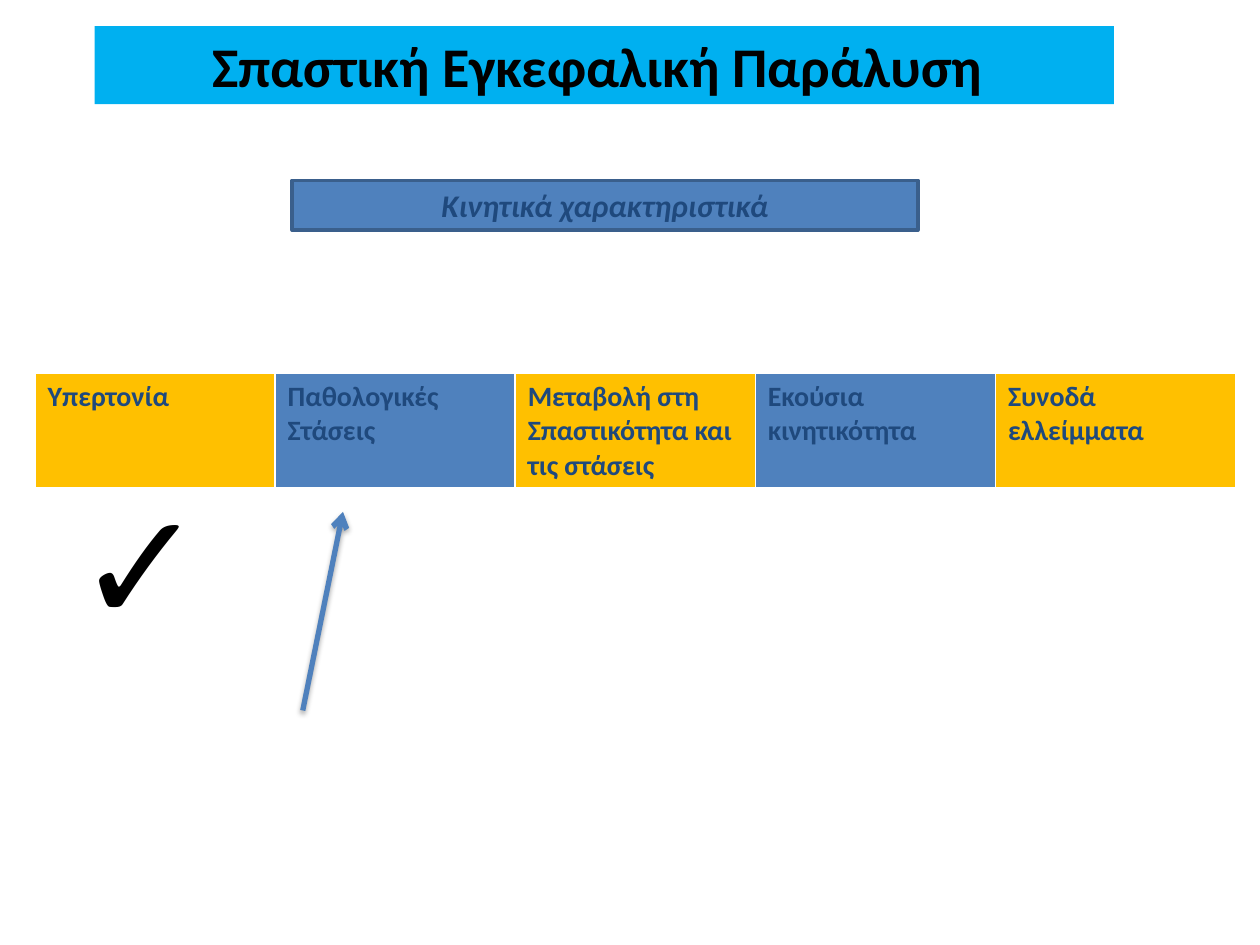
from lxml import etree
from pptx import Presentation
from pptx.dml.color import RGBColor
from pptx.enum import shapes, text
from pptx.oxml import parse_xml
from pptx.oxml.ns import nsdecls, qn
from pptx.util import Pt

FONT = "Calibri"
BLACK = RGBColor(0x00, 0x00, 0x00)
WHITE = RGBColor(0xFF, 0xFF, 0xFF)
NAVY = RGBColor(0x1F, 0x49, 0x7D)
BLUE = RGBColor(0x4F, 0x81, 0xBD)
DARK_BLUE = RGBColor(0x3A, 0x5F, 0x8C)
SKY = RGBColor(0x00, 0xB0, 0xF0)
AMBER = RGBColor(0xFF, 0xC0, 0x00)

FEATURES = ["Υπερτονία", "Παθολογικές Στάσεις",
            "Μεταβολή στη Σπαστικότητα και τις στάσεις",
            "Εκούσια κινητικότητα", "Συνοδά ελλείμματα"]
BORDERS = {"lnL": 1, "lnR": 1, "lnT": 1, "lnB": 3}


def points(box):
    return [Pt(length) for length in box]


def write(frame, content, size, color, bold=False, italic=False, align=None):
    frame.word_wrap = True
    paragraph = frame.paragraphs[0]
    paragraph.alignment = align
    run = paragraph.add_run()
    run.text = content
    font = run.font
    font.name, font.size, font.bold, font.italic = FONT, Pt(size), bold, italic
    font.color.rgb = color


def paint(shape, color):
    shape.fill.solid()
    shape.fill.fore_color.rgb = color


def place_title(slide, box):
    title = slide.shapes.title
    title.left, title.top, title.width, title.height = points(box)
    paint(title, SKY)
    title.text_frame.vertical_anchor = text.MSO_ANCHOR.MIDDLE
    title.text_frame.auto_size = text.MSO_AUTO_SIZE.NONE
    write(title.text_frame, "Σπαστική Εγκεφαλική Παράλυση ", 32, BLACK,
          bold=True, align=text.PP_ALIGN.CENTER)


def add_heading(slide, box):
    heading = slide.shapes.add_shape(shapes.MSO_SHAPE.RECTANGLE, *points(box))
    heading.shadow.inherit = False
    paint(heading, BLUE)
    heading.line.color.rgb = DARK_BLUE
    heading.line.width = Pt(2)
    heading.text_frame.vertical_anchor = text.MSO_ANCHOR.MIDDLE
    write(heading.text_frame, "Κινητικά χαρακτηριστικά", 18, NAVY,
          bold=True, italic=True, align=text.PP_ALIGN.CENTER)


def set_borders(cell):
    properties = cell._tc.get_or_add_tcPr()
    for position, (side, width) in enumerate(BORDERS.items()):
        properties.insert(position, parse_xml(
            f'<a:{side} {nsdecls("a")} w="{Pt(width)}"><a:solidFill>'
            f'<a:srgbClr val="{WHITE}"/></a:solidFill></a:{side}>'))


def add_features(slide, box):
    table = slide.shapes.add_table(1, len(FEATURES), *points(box)).table
    for index, feature in enumerate(FEATURES):
        table.columns[index].width = Pt(box[2] / len(FEATURES))
        cell = table.cell(0, index)
        paint(cell, BLUE if index % 2 else AMBER)
        set_borders(cell)
        write(cell.text_frame, feature, 16, NAVY, bold=True)


def add_check_mark(slide, box):
    check_mark = slide.shapes.add_textbox(*points(box))
    write(check_mark.text_frame, "✓", 88, BLACK)


def add_arrow(slide, start, end):
    arrow = slide.shapes.add_connector(
        shapes.MSO_CONNECTOR.STRAIGHT, *points(start + end))
    arrow.line.color.rgb = BLUE
    arrow.line.width = Pt(3)
    # Arrowhead and soft shadow
    etree.SubElement(arrow.line._get_or_add_ln(), qn("a:tailEnd"), type="arrow")
    arrow._element.spPr.append(parse_xml(
        f'<a:effectLst {nsdecls("a")}><a:outerShdw blurRad="{Pt(3.1)}" '
        f'dist="{Pt(1.8)}" dir="5400000" rotWithShape="0">'
        f'<a:srgbClr val="{BLACK}"><a:alpha val="35000"/></a:srgbClr>'
        '</a:outerShdw></a:effectLst>'))


def main():
    presentation = Presentation()
    presentation.slide_width, presentation.slide_height = Pt(720), Pt(540)
    slide = presentation.slides.add_slide(presentation.slide_layouts[5])
    place_title(slide, (54, 15, 582.5, 44.5))
    add_features(slide, (20, 213.5, 686, 64.5))
    add_heading(slide, (167, 103, 357.5, 28.5))
    add_check_mark(slide, (36.5, 264, 73.5, 114))
    add_arrow(slide, (173, 406), (196, 292.5))
    presentation.save("out.pptx")


if __name__ == "__main__":
    main()
